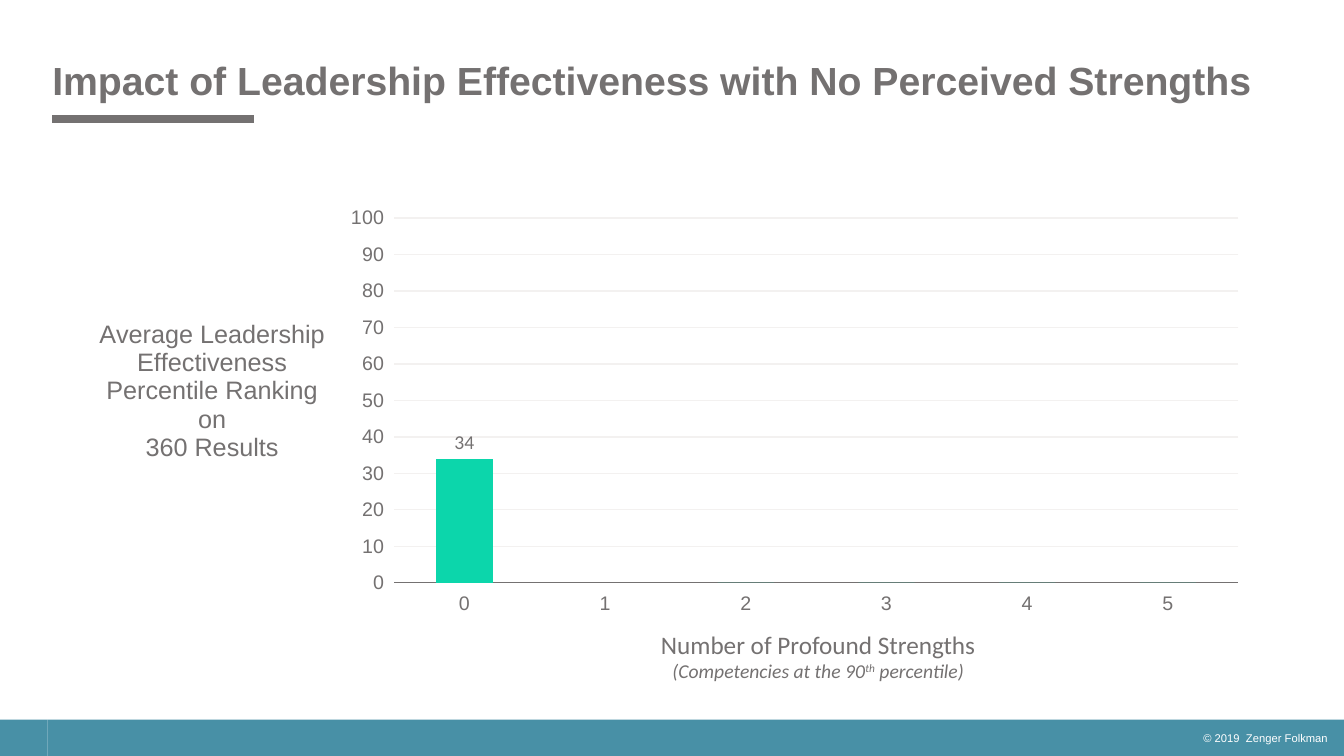
from lxml import etree
from pptx import Presentation
from pptx.chart.data import CategoryChartData
from pptx.dml.color import RGBColor
from pptx.enum.chart import XL_CHART_TYPE, XL_LABEL_POSITION, XL_TICK_LABEL_POSITION, XL_TICK_MARK
from pptx.enum.shapes import MSO_CONNECTOR, MSO_SHAPE
from pptx.enum.text import MSO_ANCHOR, PP_ALIGN
from pptx.oxml.ns import qn
from pptx.util import Inches, Pt

GREY = RGBColor(0x74, 0x71, 0x71)
TEAL = RGBColor(0x48, 0x90, 0xA6)
GREEN = RGBColor(0x0C, 0xD6, 0xAB)
PALE = RGBColor(0xF3, 0xF1, 0xF0)
WHITE = RGBColor(0xFF, 0xFF, 0xFF)

TITLE = "Impact of Leadership Effectiveness with No Perceived Strengths"
COPYRIGHT = "© 2019  Zenger Folkman"
VALUE_TITLE = ["Average Leadership Effectiveness Percentile Ranking on", "360 Results"]
STRENGTHS = "Number of Profound Strengths"
PERCENTILE = [("(Competencies at the 90", 0), ("th", 30000), (" percentile)", 0)]
CATEGORIES = ["0", "1", "2", "3", "4", "5"]
VALUES = [34, None, 0, 0, 0, 0]
FOOTER_PARTS = [(0.47, 12.86), (0, 0.47)]
PLOT_AREA = {"layoutTarget": "inner", "xMode": "edge", "yMode": "edge",
             "x": 0.26, "y": 0.043, "w": 0.728, "h": 0.76}
VALUE_TITLE_PLACE = {"xMode": "edge", "yMode": "edge", "x": 0.003, "y": 0.245}


def set_font(font, size, color, name="Arial", bold=False):
    font.size = Pt(size)
    font.name = name
    font.bold = bold
    font.color.rgb = color


def add_text_box(page, left, top, width, height):
    box = page.shapes.add_textbox(Inches(left), Inches(top), Inches(width), Inches(height))
    box.text_frame.word_wrap = True
    return box.text_frame


def set_layout(layout, settings):
    for child in list(layout):
        layout.remove(child)
    manual = etree.SubElement(layout, qn("c:manualLayout"))
    for key, value in settings.items():
        etree.SubElement(manual, qn(f"c:{key}")).set("val", str(value))


def add_footer(page):
    for left, width in FOOTER_PARTS:
        band = page.shapes.add_shape(
            MSO_SHAPE.RECTANGLE, Inches(left), Inches(7.14), Inches(width), Inches(0.36))
        band.shadow.inherit = False
        band.fill.solid()
        band.fill.fore_color.rgb = TEAL
        band.line.fill.background()
    para = add_text_box(page, 10.27, 7.21, 3, 0.14).paragraphs[0]
    para.text = COPYRIGHT
    para.alignment = PP_ALIGN.RIGHT
    set_font(para.font, 8, WHITE)


def add_heading(page):
    rule = page.shapes.add_connector(
        MSO_CONNECTOR.STRAIGHT, Inches(0.52), Inches(1.18), Inches(2.52), Inches(1.18))
    rule.line.color.rgb = GREY
    rule.line.width = Pt(5.25)
    etree.SubElement(rule._element.spPr, qn("a:effectLst"))
    frame = add_text_box(page, 0.42, 0.62, 12.55, 0.46)
    frame.vertical_anchor = MSO_ANCHOR.BOTTOM
    para = frame.paragraphs[0]
    para.text = TITLE
    para.line_spacing = 0.9
    set_font(para.font, 28, GREY, bold=True)


def add_value_title(axis):
    frame = axis.axis_title.text_frame
    frame.text = "\n".join(VALUE_TITLE)
    for para in frame.paragraphs:
        para.alignment = PP_ALIGN.CENTER
        set_font(para.font, 18, GREY)
    body = frame._txBody.find(qn("a:bodyPr"))
    body.set("rot", "0")
    body.set("vert", "horz")
    title = axis.axis_title._element
    layout = title.find(qn("c:layout"))
    if layout is None:
        layout = etree.Element(qn("c:layout"))
        title.find(qn("c:tx")).addnext(layout)
    set_layout(layout, VALUE_TITLE_PLACE)


def add_ranking_chart(page):
    data = CategoryChartData()
    data.categories = CATEGORIES
    data.add_series("Series 1", VALUES)
    chart = page.shapes.add_chart(
        XL_CHART_TYPE.COLUMN_CLUSTERED, Inches(0.92), Inches(1.96),
        Inches(11.5), Inches(4.76), data).chart
    chart.has_legend = False
    chart.has_title = False
    set_font(chart.font, 16.8, GREY, "Calibri", True)

    plot = chart.plots[0]
    plot.gap_width = 150
    plot.vary_by_categories = False
    series = plot.series[0]
    series.format.fill.solid()
    series.format.fill.fore_color.rgb = GREEN
    series.data_labels.show_value = False
    label = series.points[0].data_label
    set_font(label.font, 14, GREY, "Calibri")
    label.position = XL_LABEL_POSITION.OUTSIDE_END

    category_axis, value_axis = chart.category_axis, chart.value_axis
    for axis in (category_axis, value_axis):
        set_font(axis.tick_labels.font, 14, GREY)
    category_axis.tick_label_position = XL_TICK_LABEL_POSITION.LOW
    category_axis.major_tick_mark = XL_TICK_MARK.NONE
    category_axis.format.line.color.rgb = GREY
    category_axis.format.line.width = Pt(0.93)
    value_axis.minimum_scale = 0
    value_axis.maximum_scale = 100
    value_axis.major_unit = 10
    value_axis.major_tick_mark = XL_TICK_MARK.OUTSIDE
    value_axis.format.line.fill.background()
    gridline = value_axis.major_gridlines.format.line
    gridline.color.rgb = PALE
    gridline.width = Pt(0.93)
    add_value_title(value_axis)

    area = chart._chartSpace.chart.plotArea
    layout = area.find(qn("c:layout"))
    if layout is None:
        layout = etree.Element(qn("c:layout"))
        area.insert(0, layout)
    set_layout(layout, PLOT_AREA)


def add_category_title(page):
    para = add_text_box(page, 4.95, 6.19, 6.33, 0.64).paragraphs[0]
    para.alignment = PP_ALIGN.CENTER
    set_font(para.font, 18, GREY, "Calibri")
    para.add_run().text = STRENGTHS
    para.add_line_break()
    for text, baseline in PERCENTILE:
        span = para.add_run()
        span.text = text
        span.font.size = Pt(14)
        span.font.italic = True
        if baseline:
            span.font._element.set("baseline", str(baseline))


def main():
    deck = Presentation()
    deck.slide_width = Inches(13.33)
    deck.slide_height = Inches(7.5)
    page = deck.slides.add_slide(deck.slide_layouts[6])
    add_footer(page)
    add_heading(page)
    add_ranking_chart(page)
    add_category_title(page)
    deck.save("out.pptx")


if __name__ == "__main__":
    main()
